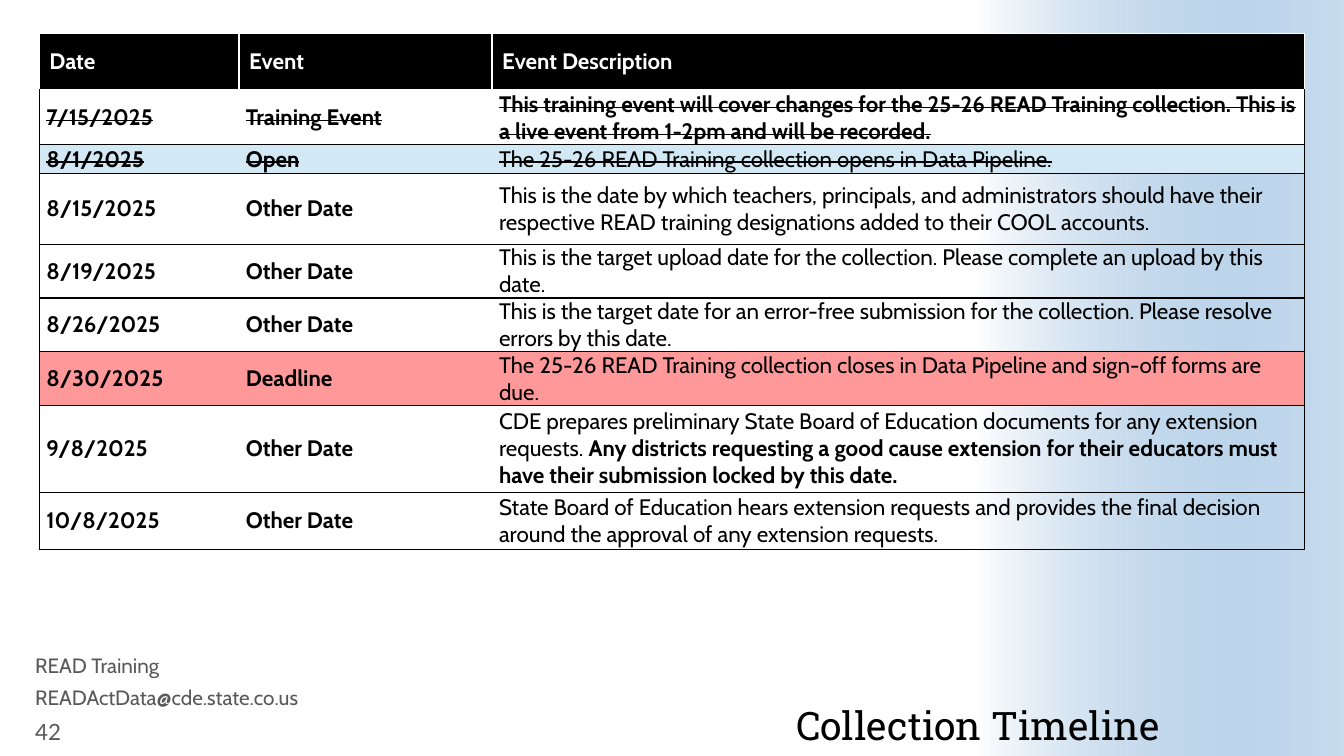
from lxml import etree
from pptx import Presentation
from pptx.dml.color import RGBColor
from pptx.enum.shapes import MSO_SHAPE
from pptx.enum.text import MSO_ANCHOR, PP_ALIGN
from pptx.oxml.ns import qn
from pptx.util import Inches, Pt

RECTANGLE = MSO_SHAPE.RECTANGLE
TOP, MIDDLE, BOTTOM = MSO_ANCHOR.TOP, MSO_ANCHOR.MIDDLE, MSO_ANCHOR.BOTTOM
LEFT, RIGHT = PP_ALIGN.LEFT, PP_ALIGN.RIGHT
BLACK, WHITE, GRAY = "000000", "FFFFFF", "595959"
NO_STYLE_NO_GRID = "{2D5ABB26-0587-4C30-8999-92F81FD0307C}"


def color(hex_value):
    return RGBColor.from_string(hex_value)


def add_border(cell, side, hex_value, points):
    """Draw one cell side (L, R, T or B); call before the cell is filled."""
    line = etree.SubElement(cell._tc.get_or_add_tcPr(), qn(f"a:ln{side}"), w=str(Pt(points)))
    fill = etree.SubElement(line, qn("a:solidFill"))
    etree.SubElement(fill, qn("a:srgbClr"), val=hex_value)


presentation = Presentation()
presentation.slide_width = Inches(13.33)
presentation.slide_height = Inches(7.5)
slide = presentation.slides.add_slide(presentation.slide_layouts[6])

# Gradient band on the right edge
band = slide.shapes.add_shape(RECTANGLE, Inches(7.75), Inches(1.92), Inches(7.5), Inches(3.66))
band.rotation = 270
band.shadow.inherit = False
band.line.fill.background()
band.fill.gradient()
band.fill.gradient_angle = 270
start, end = band.fill.gradient_stops
start.position, end.position = 0, 1
start.color.rgb = color(WHITE)
end.color.rgb = color("488BC9")
end_color = band._element.spPr.findall(f".//{qn('a:srgbClr')}")[-1]
etree.SubElement(end_color, qn("a:alpha"), val="30000")

# Title and footer: text, box, font, size, color, anchor, alignment, line spacing, inset
text_boxes = [
    ("Collection Timeline", (4.26, 6.45, 7.24, 0.98), "Roboto Slab", 28, BLACK, BOTTOM, RIGHT, 0.9, 0),
    ("READ Training", (0.25, 6.47, 3.89, 0.31), "Cabin", 14.8, GRAY, TOP, LEFT, 0.8, 0.1),
    ("READActData@cde.state.co.us", (0.25, 6.79, 3.89, 0.31), "Cabin", 14.8, GRAY, TOP, LEFT, 0.8, 0.1),
    ("42", (0.25, 7.1, 0.85, 0.31), "Lato", 16, GRAY, MIDDLE, LEFT, 1.0, 0.1),
]
for text, box, font_name, size, hex_value, anchor, alignment, spacing, inset in text_boxes:
    frame = slide.shapes.add_textbox(*map(Inches, box)).text_frame
    frame.word_wrap = True
    frame.vertical_anchor = anchor
    frame.margin_left = frame.margin_right = Inches(inset)
    frame.margin_top = frame.margin_bottom = Inches(inset / 2)
    frame.text = text
    paragraph = frame.paragraphs[0]
    paragraph.alignment = alignment
    paragraph.line_spacing = spacing
    font = paragraph.runs[0].font
    font.name, font.size = font_name, Pt(size)
    font.color.rgb = color(hex_value)

# Timeline rows: height, fill, struck through, date, event, description as (text, bold) runs
timeline = [
    (0.57, BLACK, False, "Date", "Event", [("Event Description", True)]),
    (0.44, WHITE, True, "7/15/2025", "Training Event", [
        ("This training event will cover changes for the 25-26 READ Training collection. "
         "This is a live event from 1-2pm and will be recorded.", True)]),
    (0.29, "D2E9F5", True, "8/1/2025", "Open", [
        ("The 25-26 READ Training collection opens in Data Pipeline.", False)]),
    (0.7, None, False, "8/15/2025", "Other Date", [
        ("This is the date by which teachers, principals, and administrators should have their "
         "respective READ training designations added to their COOL accounts.", False)]),
    (0.44, None, False, "8/19/2025", "Other Date", [
        ("This is the target upload date for the collection. Please complete an upload by this date.", False)]),
    (0.44, None, False, "8/26/2025", "Other Date", [
        ("This is the target date for an error-free submission for the collection. "
         "Please resolve errors by this date.", False)]),
    (0.44, "FF9999", False, "8/30/2025", "Deadline", [
        ("The 25-26 READ Training collection closes in Data Pipeline and sign-off forms are due.", False)]),
    (0.86, None, False, "9/8/2025", "Other Date", [
        ("CDE prepares preliminary State Board of Education documents for any extension requests. ", False),
        ("Any districts requesting a good cause extension for their educators must have their "
         "submission locked by this date.", True)]),
    (0.57, None, False, "10/8/2025", "Other Date", [
        ("State Board of Education hears extension requests and provides the final decision "
         "around the approval of any extension requests.", False)]),
]
column_widths = [1.98, 2.51, 8.06]
table_height = sum(row[0] for row in timeline)
table = slide.shapes.add_table(len(timeline), len(column_widths), Inches(0.39), Inches(0.33),
                               Inches(sum(column_widths)), Inches(table_height)).table
table.horz_banding = False
table._tbl.tblPr.find(qn("a:tableStyleId")).text = NO_STYLE_NO_GRID
for column, width in zip(table.columns, column_widths):
    column.width = Inches(width)

for row_index, (height, fill, struck, date, event, description) in enumerate(timeline):
    table.rows[row_index].height = Inches(height)
    is_header = row_index == 0
    for column_index, runs in enumerate([[(date, True)], [(event, True)], description]):
        cell = table.cell(row_index, column_index)
        cell.vertical_anchor = MIDDLE
        if is_header:
            for side in "LRTB":
                add_border(cell, side, WHITE, 3 if side == "B" else 1)
        else:
            cell.margin_left = cell.margin_right = Inches(0.07)
            cell.margin_top = cell.margin_bottom = 0
            if column_index == 0:
                add_border(cell, "L", BLACK, 1)
            if column_index == 2:
                add_border(cell, "R", BLACK, 1)
            add_border(cell, "T", WHITE if row_index == 1 else BLACK, 1)
            add_border(cell, "B", BLACK, 1)
        if fill:
            cell.fill.solid()
            cell.fill.fore_color.rgb = color(fill)
        else:
            cell.fill.background()
        for text, bold in runs:
            run = cell.text_frame.paragraphs[0].add_run()
            run.text = text
            run.font.name, run.font.size, run.font.bold = "Cabin", Pt(16), bold
            run.font.color.rgb = color(WHITE if is_header else BLACK)
            if struck:
                run._r.get_or_add_rPr().set("strike", "sngStrike")

presentation.save("out.pptx")
